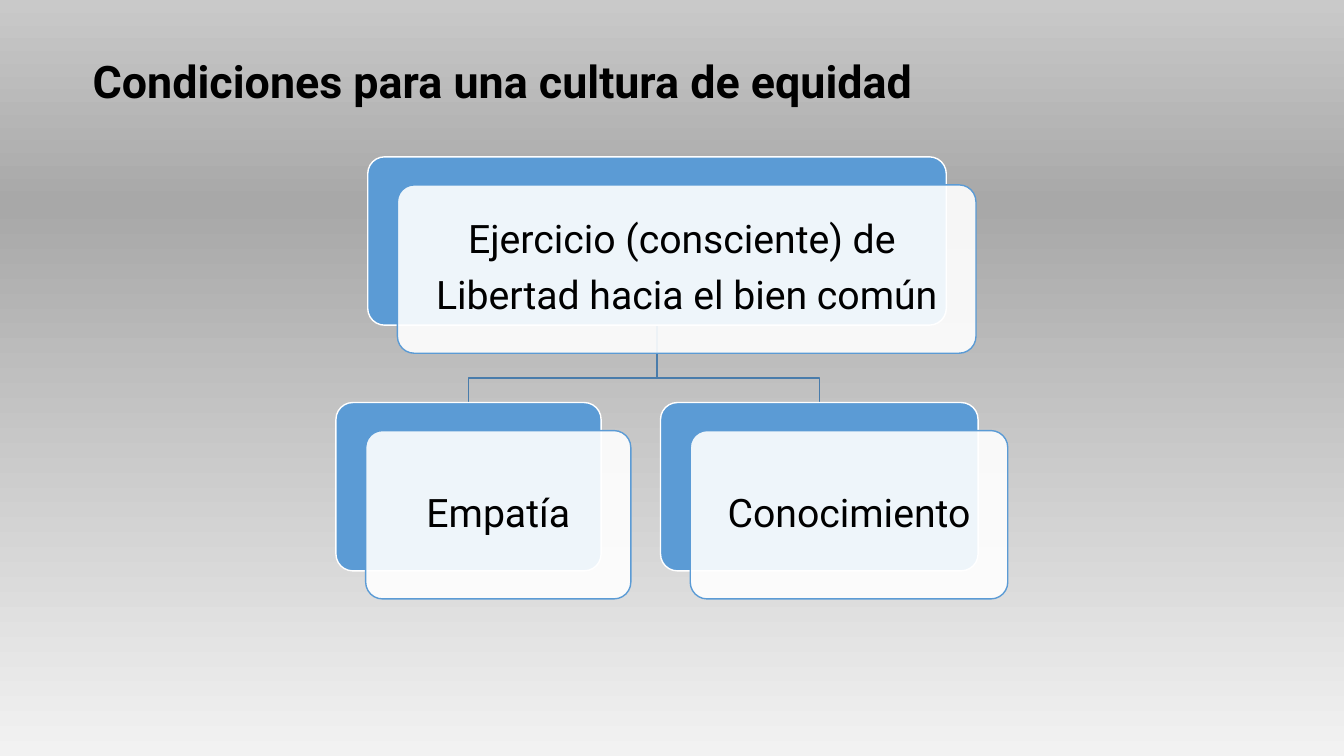
"""Build the slide on the conditions for a culture of equity."""
import lxml.etree
import pptx
import pptx.util
from pptx.dml.color import RGBColor
from pptx.enum.shapes import MSO_SHAPE
from pptx.enum.text import MSO_ANCHOR, PP_ALIGN
from pptx.oxml.ns import qn

WIDTH, HEIGHT = pptx.util.Inches(13.333), pptx.util.Inches(7.5)
FONT = "Roboto"
BLACK = RGBColor(0x00, 0x00, 0x00)
WHITE = RGBColor(0xFF, 0xFF, 0xFF)
BLUE = RGBColor(0x5B, 0x9B, 0xD5)
BRANCH_BLUE = RGBColor(0x49, 0x7C, 0xAB)
BACKGROUND_STOPS = (
    (0, RGBColor(0xF2, 0xF2, 0xF2)),
    (73, RGBColor(0xA8, 0xA8, 0xA8)),
    (100, RGBColor(0xC9, 0xC9, 0xC9)),
)
CARD_HEIGHT = 22.27
OFFSET_X, OFFSET_Y = 2.21, 3.71
PARENT_TOP, BEND, CHILD_TOP = 20.75, 50, 53.25
PARENT = (27.36, 43.05, ("Ejercicio (consciente) de ", "Libertad hacia el bien común"))
CHILDREN = (
    (25, 19.73, ("Empatía",)),
    (49.15, 23.63, ("Conocimiento",)),
)


def across(percent):
    """Return a share of the slide's width."""
    return round(WIDTH * percent / 100)


def down(percent):
    """Return a share of the slide's height."""
    return round(HEIGHT * percent / 100)


def paint_background(slide):
    """Fill the background with an upward three-stop gradient."""
    fill = slide.background.fill
    fill.gradient()
    fill.gradient_angle = 90
    stop_list = slide.background._cSld.find(".//" + qn("a:gsLst"))
    for stop in list(stop_list):
        stop_list.remove(stop)
    for position, color in BACKGROUND_STOPS:
        stop = lxml.etree.SubElement(stop_list, qn("a:gs"), pos=str(position * 1000))
        lxml.etree.SubElement(stop, qn("a:srgbClr"), val=str(color))


def add_lines(text_frame, lines, size, alignment, bold=False):
    """Write one paragraph for each line, centred vertically."""
    text_frame.word_wrap = True
    text_frame.vertical_anchor = MSO_ANCHOR.MIDDLE
    for index, line in enumerate(lines):
        paragraph = text_frame.add_paragraph() if index else text_frame.paragraphs[0]
        paragraph.alignment = alignment
        paragraph.line_spacing = 0.9
        paragraph.space_after = pptx.util.Pt(size * 0.35)
        run = paragraph.add_run()
        run.text = line
        run.font.name = FONT
        run.font.size = pptx.util.Pt(size)
        run.font.bold = bold
        run.font.color.rgb = BLACK


def add_title(slide, text):
    """Add the slide's heading."""
    box = slide.shapes.add_textbox(across(6.15), down(2.8), across(86.03), down(16.67))
    add_lines(box.text_frame, (text,), 32, PP_ALIGN.LEFT, bold=True)


def add_panel(slide, left, top, width, fill_color, line_color):
    """Add one rounded panel and return it."""
    panel = slide.shapes.add_shape(
        MSO_SHAPE.ROUNDED_RECTANGLE,
        across(left), down(top), across(width), down(CARD_HEIGHT))
    panel.adjustments[0] = 0.1
    panel.shadow.inherit = False
    panel.fill.solid()
    panel.fill.fore_color.rgb = fill_color
    panel.line.color.rgb = line_color
    panel.line.width = pptx.util.Pt(1)
    return panel


def add_card(slide, left, top, width, lines):
    """Add a blue panel with a translucent text panel offset over it."""
    add_panel(slide, left, top, width, BLUE, WHITE)
    front = add_panel(slide, left + OFFSET_X, top + OFFSET_Y, width, WHITE, BLUE)
    color = front._element.spPr.find(qn("a:solidFill")).find(qn("a:srgbClr"))
    lxml.etree.SubElement(color, qn("a:alpha"), val="90000")
    frame = front.text_frame
    frame.margin_left = frame.margin_right = pptx.util.Inches(0.12)
    frame.margin_top = frame.margin_bottom = pptx.util.Inches(0.12)
    add_lines(frame, lines, 28, PP_ALIGN.CENTER)


def add_branch(slide, start, end):
    """Draw the bent line from the parent's base to a child's top."""
    bottom = PARENT_TOP + CARD_HEIGHT
    builder = slide.shapes.build_freeform(across(start), down(bottom))
    corners = ((start, BEND), (end, BEND), (end, CHILD_TOP))
    builder.add_line_segments([(across(x), down(y)) for x, y in corners], close=False)
    branch = builder.convert_to_shape()
    branch.shadow.inherit = False
    branch.fill.background()
    branch.line.color.rgb = BRANCH_BLUE
    branch.line.width = pptx.util.Pt(1)


def main():
    """Build and save the presentation."""
    presentation = pptx.Presentation()
    presentation.slide_width, presentation.slide_height = WIDTH, HEIGHT
    slide = presentation.slides.add_slide(presentation.slide_layouts[6])
    paint_background(slide)
    add_title(slide, "Condiciones para una cultura de equidad")
    parent_left, parent_width, parent_lines = PARENT
    for left, width, _ in reversed(CHILDREN):
        add_branch(slide, parent_left + parent_width / 2, left + width / 2)
    add_card(slide, parent_left, PARENT_TOP, parent_width, parent_lines)
    for left, width, lines in CHILDREN:
        add_card(slide, left, CHILD_TOP, width, lines)
    presentation.save("out.pptx")


if __name__ == "__main__":
    main()
